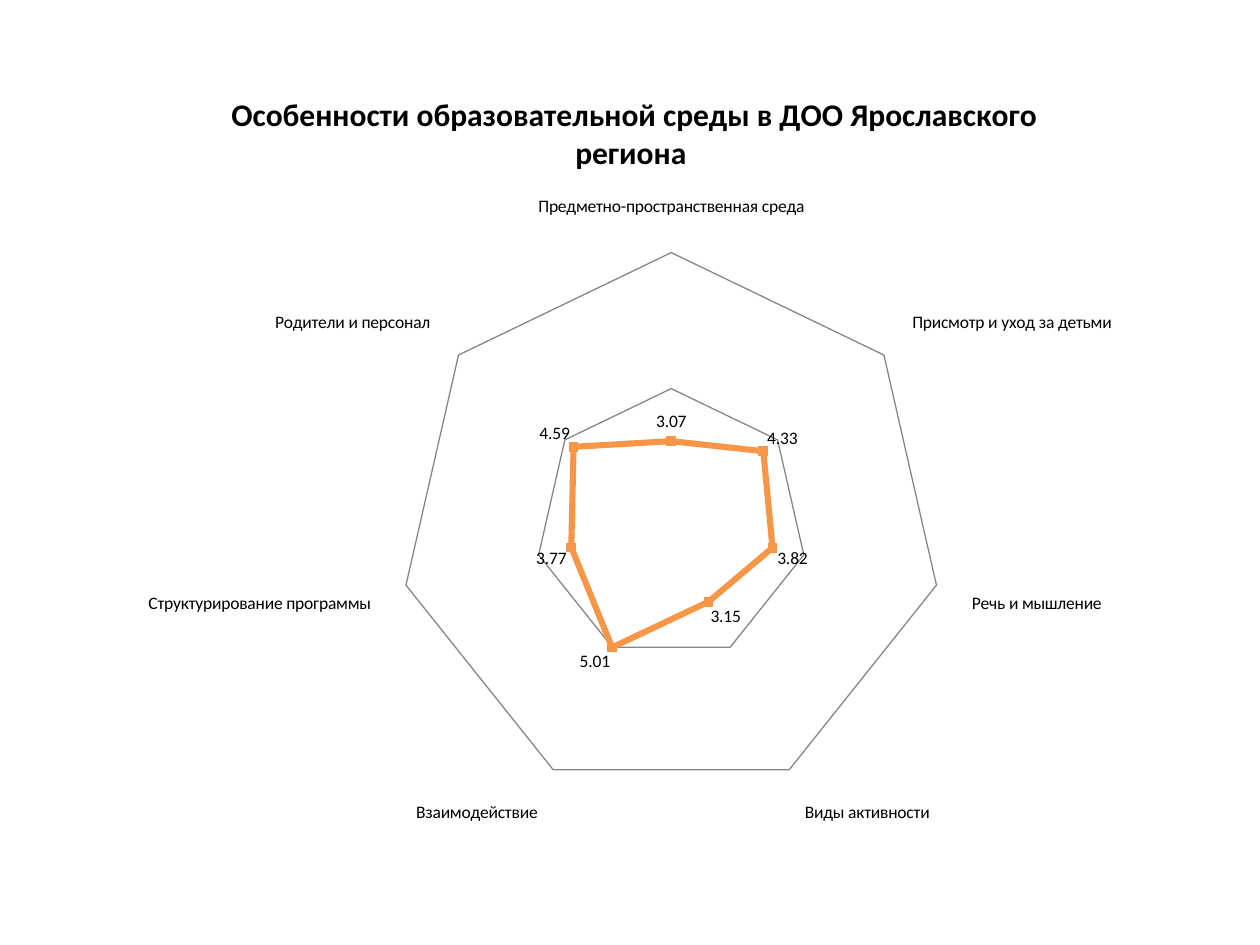
import pptx
import pptx.chart.data
import pptx.dml.color
import pptx.enum.chart
import pptx.oxml
import pptx.oxml.ns
import pptx.util
from pptx.util import Inches

TITLE = "Особенности образовательной среды в ДОО Ярославского региона "
SCORES = {
    "Предметно-пространственная среда": 3.07,
    "Присмотр и уход за детьми": 4.33,
    "Речь и мышление": 3.82,
    "Виды активности": 3.15,
    "Взаимодействие": 5.01,
    "Структурирование программы": 3.77,
    "Родители и персонал": 4.59,
}
ORANGE, GRAY, BLACK = "F79646", "868686", "000000"


def color(hex_string):
    return pptx.dml.color.RGBColor.from_string(hex_string)


def format_font(font, size, bold=False):
    font.name = "Calibri"
    font.size = pptx.util.Pt(size)
    font.bold = bold
    font.color.rgb = color(BLACK)


def format_line(line, hex_string, width):
    line.color.rgb = color(hex_string)
    line.width = pptx.util.Pt(width)


def set_layout(element, index, target=None, **fractions):
    """Place a chart part by fractions of the chart's width and height."""
    for layout in element.findall(pptx.oxml.ns.qn("c:layout")):
        element.remove(layout)
    settings = {"layoutTarget": target} if target else {}
    settings.update(xMode="edge", yMode="edge", **fractions)
    children = "".join(f'<c:{name} val="{value}"/>' for name, value in settings.items())
    element.insert(index, pptx.oxml.parse_xml(
        f'<c:layout {pptx.oxml.ns.nsdecls("c")}><c:manualLayout>'
        f'{children}</c:manualLayout></c:layout>'))


def add_radar_chart(slide):
    data = pptx.chart.data.CategoryChartData(number_format="0.00")
    data.categories = list(SCORES)
    data.add_series("Series 1", list(SCORES.values()))
    chart = slide.shapes.add_chart(
        pptx.enum.chart.XL_CHART_TYPE.RADAR_MARKERS,
        Inches(0.43), Inches(0.44), Inches(9.07), Inches(6.26), data).chart
    chart.has_legend = False
    format_font(chart.font, 10)
    return chart


def format_title(chart):
    chart.has_title = True
    paragraph = chart.chart_title.text_frame.paragraphs[0]
    paragraph.text = TITLE
    format_font(paragraph.runs[0].font, 18, bold=True)
    chart.chart_title.include_in_layout = False
    set_layout(chart.chart_title._element, 1, x=0.15, y=0.04)


def format_axes(chart):
    no_ticks = pptx.enum.chart.XL_TICK_MARK.NONE
    for axis in (chart.category_axis, chart.value_axis):
        axis.has_major_gridlines = True
        format_line(axis.major_gridlines.format.line, GRAY, 0.75)
        axis.major_tick_mark = axis.minor_tick_mark = no_ticks
    chart.value_axis.minimum_scale = 0
    chart.value_axis.maximum_scale = 10
    chart.value_axis.major_unit = 5
    chart.value_axis.visible = False


def format_series(chart):
    plot = chart.plots[0]
    plot.vary_by_categories = False
    series = plot.series[0]
    series.smooth = False
    format_line(series.format.line, ORANGE, 3.5)
    series.marker.style = pptx.enum.chart.XL_MARKER_STYLE.SQUARE
    series.marker.size = 5
    series.marker.format.fill.solid()
    series.marker.format.fill.fore_color.rgb = color(ORANGE)
    format_line(series.marker.format.line, ORANGE, 0.75)
    labels = series.data_labels
    labels.show_value = True
    labels.number_format = "0.00"
    labels.number_format_is_linked = False
    format_font(labels.font, 10)


def main():
    presentation = pptx.Presentation()
    presentation.slide_width = Inches(10)
    presentation.slide_height = Inches(7.5)
    slide = presentation.slides.add_slide(presentation.slide_layouts[6])
    chart = add_radar_chart(slide)
    format_title(chart)
    format_axes(chart)
    format_series(chart)
    plot_area = chart._chartSpace.chart.plotArea
    set_layout(plot_area, 0, "inner", x=0.3, y=0.25, w=0.48, h=0.69)
    presentation.save("out.pptx")


if __name__ == "__main__":
    main()
